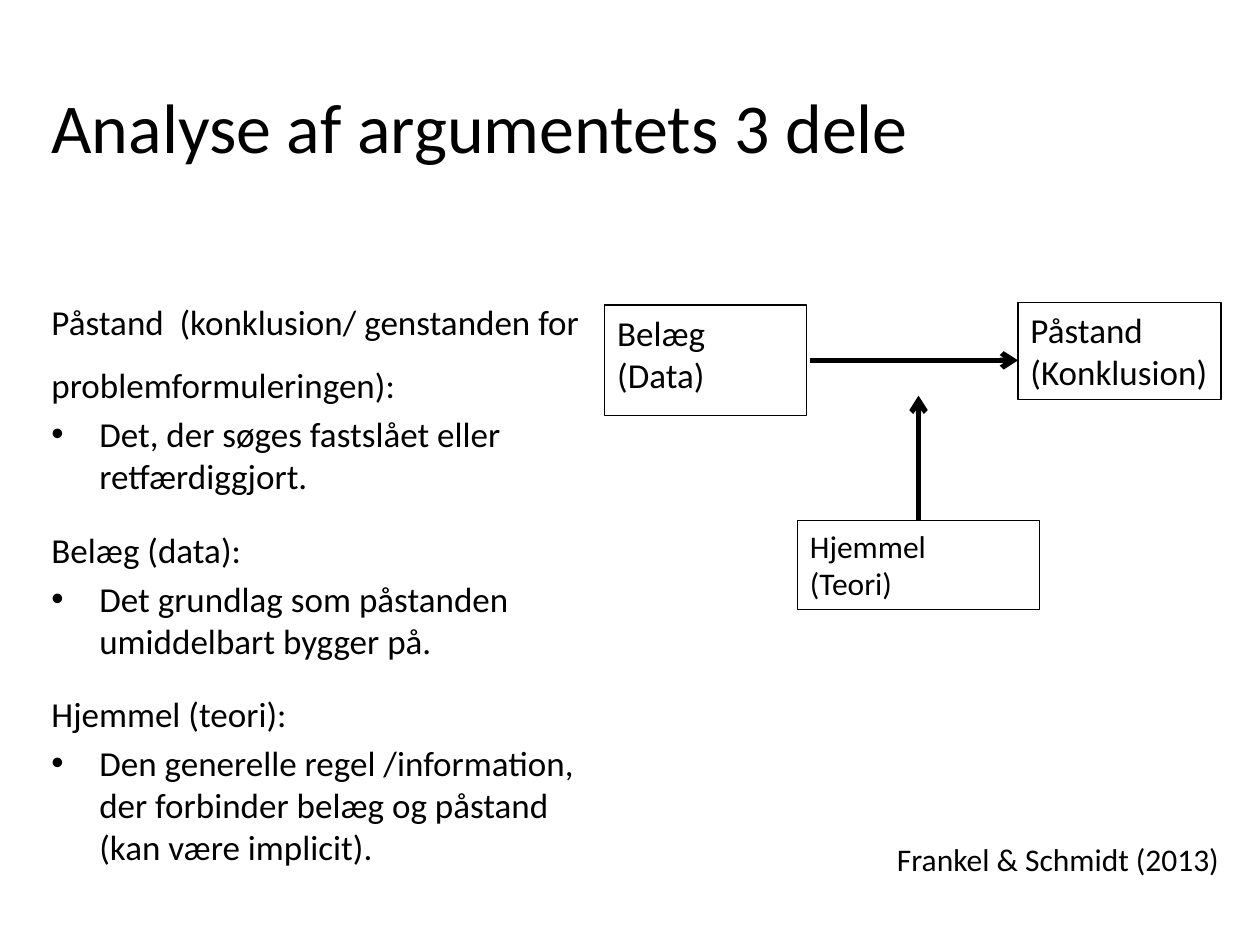
import pptx
import pptx.dml.color
import pptx.enum.shapes
import pptx.enum.text
import pptx.util
from lxml import etree
from pptx.oxml.ns import qn

Inches = pptx.util.Inches
Pt = pptx.util.Pt
ANCHOR = pptx.enum.text.MSO_ANCHOR
BLACK = "000000"
FONT = "Calibri"

PARTS = [
    ("Påstand  (konklusion/ genstanden for problemformuleringen):",
     "Det, der søges fastslået eller retfærdiggjort."),
    ("Belæg (data):",
     "Det grundlag som påstanden umiddelbart bygger på."),
    ("Hjemmel (teori):",
     "Den generelle regel /information, der forbinder belæg og påstand (kan være implicit)."),
]


def color(value):
    """Return the colour for a hex string."""
    return pptx.dml.color.RGBColor.from_string(value)


def add_run(p, text, size):
    """Add one run in the slide's font and colour."""
    r = p.add_run()
    r.text = text
    r.font.name = FONT
    r.font.size = Pt(size)
    r.font.color.rgb = color(BLACK)


def add_text_box(s, box, wrap=True, anchor=ANCHOR.TOP):
    """Add an empty text box and return its text frame."""
    tf = s.shapes.add_textbox(*map(Inches, box)).text_frame
    tf.word_wrap = wrap
    tf.vertical_anchor = anchor
    return tf


def add_title(s, box, text):
    """Place the title, centred vertically in its box."""
    tf = add_text_box(s, box, anchor=ANCHOR.MIDDLE)
    add_run(tf.paragraphs[0], text, 40)


def set_bullet(p, indent):
    """Give a paragraph a round bullet with a hanging indent."""
    pPr = p._p.get_or_add_pPr()
    pPr.set("marL", str(Inches(indent)))
    pPr.set("indent", str(-Inches(indent)))
    etree.SubElement(pPr, qn("a:buFont")).set("typeface", "Arial")
    etree.SubElement(pPr, qn("a:buChar")).set("char", "•")


def add_definitions(s, box, parts):
    """Place each part's heading with its bulleted definition."""
    tf = add_text_box(s, box)
    for i, (heading, definition) in enumerate(parts):
        p = tf.add_paragraph() if i else tf.paragraphs[0]
        if i:
            p.space_before = Pt(18)
        else:
            p.line_spacing = 1.5
        add_run(p, heading, 20)
        p = tf.add_paragraph()
        p.space_before = Pt(4)
        set_bullet(p, 0.38)
        add_run(p, definition, 20)


def add_node(s, box, lines, size):
    """Add an outlined rectangle with one paragraph per line."""
    sp = s.shapes.add_shape(pptx.enum.shapes.MSO_SHAPE.RECTANGLE, *map(Inches, box))
    sp.shadow.inherit = False
    sp.fill.background()
    sp.line.color.rgb = color(BLACK)
    sp.line.width = Pt(0.75)
    tf = sp.text_frame
    tf.word_wrap = True
    tf.vertical_anchor = ANCHOR.TOP
    for i, line in enumerate(lines):
        p = tf.add_paragraph() if i else tf.paragraphs[0]
        p.alignment = pptx.enum.text.PP_ALIGN.LEFT
        add_run(p, line, size)
    return sp


def add_arrow(s, start, end):
    """Add a thick straight arrow between two points."""
    cn = s.shapes.add_connector(
        pptx.enum.shapes.MSO_CONNECTOR.STRAIGHT, *map(Inches, start + end))
    cn.line.color.rgb = color(BLACK)
    cn.line.width = Pt(3)
    etree.SubElement(cn.line._get_or_add_ln(), qn("a:tailEnd")).set("type", "arrow")
    etree.SubElement(cn._element.spPr, qn("a:effectLst"))
    return cn


def add_argument_model(s, box):
    """Place the three nodes and two arrows of the argument model."""
    left, top, width, height = box
    right, bottom = left + width, top + height
    add_node(s, (left, top + 0.02, 1.6, 0.88), ["Belæg", "(Data)"], 20)
    add_node(s, (right - 1.61, top, 1.61, 0.77), ["Påstand", "(Konklusion)"], 20)
    warrant = add_node(s, (left + 1.53, bottom - 0.71, 1.92, 0.71),
                       ["Hjemmel", "(Teori)"], 18)
    y = top + 0.46
    add_arrow(s, (left + 1.63, y), (right - 1.61, y))
    x = left + 1.53 + 1.92 / 2
    support = add_arrow(s, (x, bottom - 0.71), (x, top + 0.74))
    support.begin_connect(warrant, 0)


def add_source(s, box, text):
    """Place the literature reference on the lower line of its box."""
    tf = add_text_box(s, box, wrap=False)
    tf.margin_top = Inches(0.36)
    add_run(tf.paragraphs[0], text, 18)


def main():
    """Build and save the slide."""
    prs = pptx.Presentation()
    prs.slide_width, prs.slide_height = Inches(10), Inches(7.5)
    s = prs.slides.add_slide(prs.slide_layouts[6])
    add_title(s, (0.31, 0.58, 9.37, 0.83), "Analyse af argumentets 3 dele")
    add_definitions(s, (0.31, 2.17, 4.49, 5.33), PARTS)
    add_argument_model(s, (4.8, 2.4, 4.89, 2.44))
    add_source(s, (7.02, 6.31, 2.87, 0.79), "Frankel & Schmidt (2013)")
    prs.save("out.pptx")


if __name__ == "__main__":
    main()
